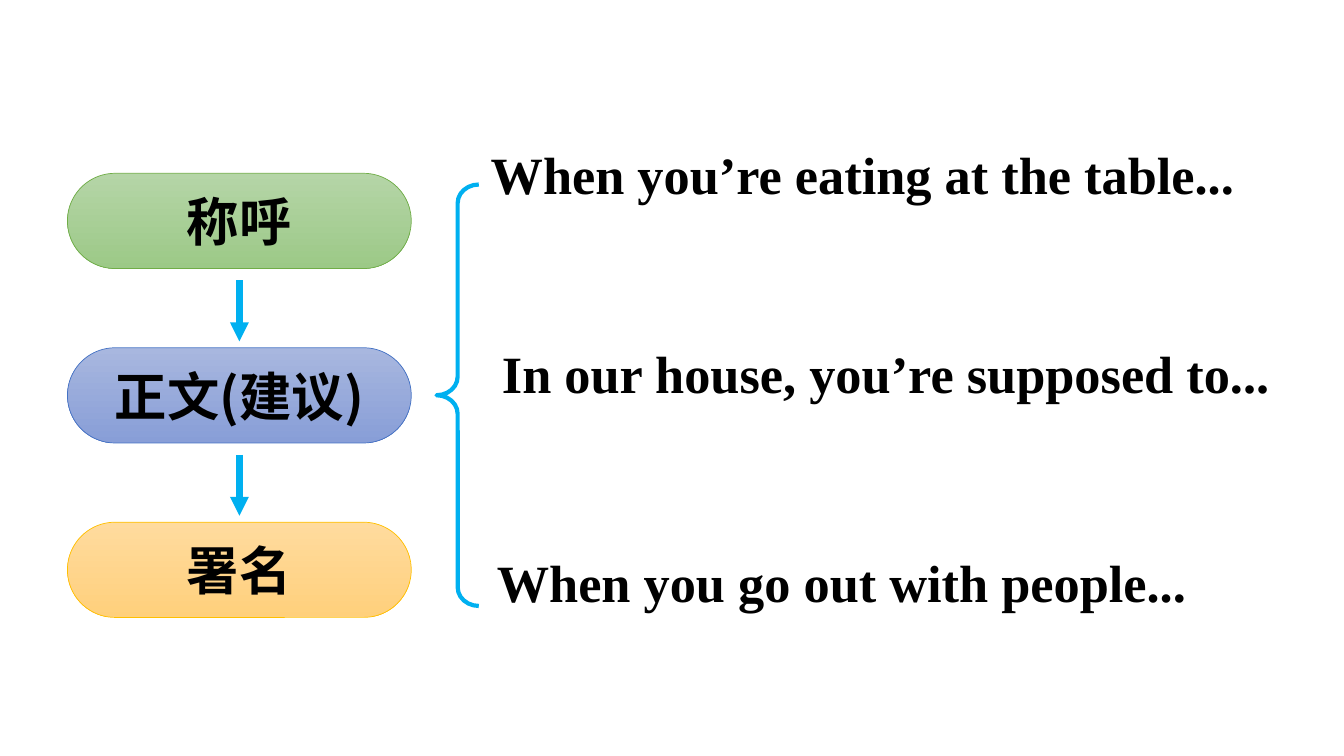
from lxml import etree
from pptx import Presentation
from pptx.dml.color import RGBColor
from pptx.enum.shapes import MSO_CONNECTOR, MSO_SHAPE
from pptx.enum.text import MSO_ANCHOR, MSO_AUTO_SIZE, PP_ALIGN
from pptx.oxml.ns import qn
from pptx.util import Pt

TEXT_SIZE = 37.4
CJK_FONT, LATIN_FONT = "Noto Sans CJK SC", "Times New Roman"
BLACK, SKY = "000000", "00B0F0"

# Letter parts: text, gradient top, gradient bottom, outline
LETTER_PARTS = [
    ("称呼", "B5D5A7", "9CC987", "70AD47"),
    ("正文(建议)", "A8B7DF", "889ED7", "4472C4"),
    ("署名", "FFDB9E", "FFD07C", "FFC000"),
]
PART_LEFT, PART_TOP, PART_WIDTH, PART_HEIGHT = 48.2, 123.8, 245.6, 68
PART_PITCH = 124.6
ARROW_GAP, ARROW_LENGTH = 8.5, 43.5

# Suggestions: text, left, top, width
SUGGESTIONS = [
    ("When you’re eating at the table...", 343.4, 97.9, 597),
    ("In our house, you’re supposed to...", 351.4, 240.5, 597),
    ("When you go out with people...", 347.8, 389.5, 560),
]


def color(value):
    return RGBColor.from_string(value)


def format_text(frame, text, font_name):
    frame.text = text
    run = frame.paragraphs[0].runs[0]
    run.font.size = Pt(TEXT_SIZE)
    run.font.bold = True
    run.font.name = font_name
    run.font.color.rgb = color(BLACK)
    # East Asian characters use the same typeface
    east_asian = etree.SubElement(run.font._element, qn("a:ea"))
    east_asian.set("typeface", font_name)


def add_letter_part(slide, top, text, light, dark, outline):
    part = slide.shapes.add_shape(
        MSO_SHAPE.ROUNDED_RECTANGLE,
        Pt(PART_LEFT), Pt(top), Pt(PART_WIDTH), Pt(PART_HEIGHT))
    part.adjustments[0] = 0.5
    part.shadow.inherit = False
    part.fill.gradient()
    part.fill.gradient_angle = 270
    for stop, shade in zip(part.fill.gradient_stops, (light, dark)):
        stop.color.rgb = color(shade)
    part.line.color.rgb = color(outline)
    part.line.width = Pt(0.5)
    frame = part.text_frame
    frame.vertical_anchor = MSO_ANCHOR.MIDDLE
    format_text(frame, text, CJK_FONT)
    frame.paragraphs[0].alignment = PP_ALIGN.CENTER


def add_down_arrow(slide, x, top):
    arrow = slide.shapes.add_connector(
        MSO_CONNECTOR.STRAIGHT, Pt(x), Pt(top), Pt(x), Pt(top + ARROW_LENGTH))
    arrow.line.color.rgb = color(SKY)
    arrow.line.width = Pt(4.5)
    etree.SubElement(arrow.line._get_or_add_ln(), qn("a:tailEnd"), type="triangle")
    etree.SubElement(arrow._element.spPr, qn("a:effectLst"))


def add_brace(slide, left, top, width, height):
    brace = slide.shapes.add_shape(
        MSO_SHAPE.LEFT_BRACE, Pt(left), Pt(top), Pt(width), Pt(height))
    brace.adjustments[0] = 0.439
    brace.shadow.inherit = False
    brace.fill.background()
    brace.line.color.rgb = color(SKY)
    brace.line.width = Pt(3)


def add_suggestion(slide, text, left, top, width):
    suggestion = slide.shapes.add_textbox(Pt(left), Pt(top), Pt(width), Pt(52.6))
    frame = suggestion.text_frame
    frame.word_wrap = True
    frame.auto_size = MSO_AUTO_SIZE.SHAPE_TO_FIT_TEXT
    format_text(frame, text, LATIN_FONT)


def main():
    presentation = Presentation()
    presentation.slide_width, presentation.slide_height = Pt(960), Pt(540)
    slide = presentation.slides.add_slide(presentation.slide_layouts[6])

    # Letter structure, with an arrow between neighbouring parts
    for index, letter_part in enumerate(LETTER_PARTS):
        top = PART_TOP + index * PART_PITCH
        add_letter_part(slide, top, *letter_part)
        if index < len(LETTER_PARTS) - 1:
            add_down_arrow(slide, PART_LEFT + PART_WIDTH / 2,
                           top + PART_HEIGHT + ARROW_GAP)

    # Suggestions for the body of the letter
    add_brace(slide, 311.8, 131.8, 30.2, 301)
    for suggestion in SUGGESTIONS:
        add_suggestion(slide, *suggestion)

    presentation.save("out.pptx")


if __name__ == "__main__":
    main()
